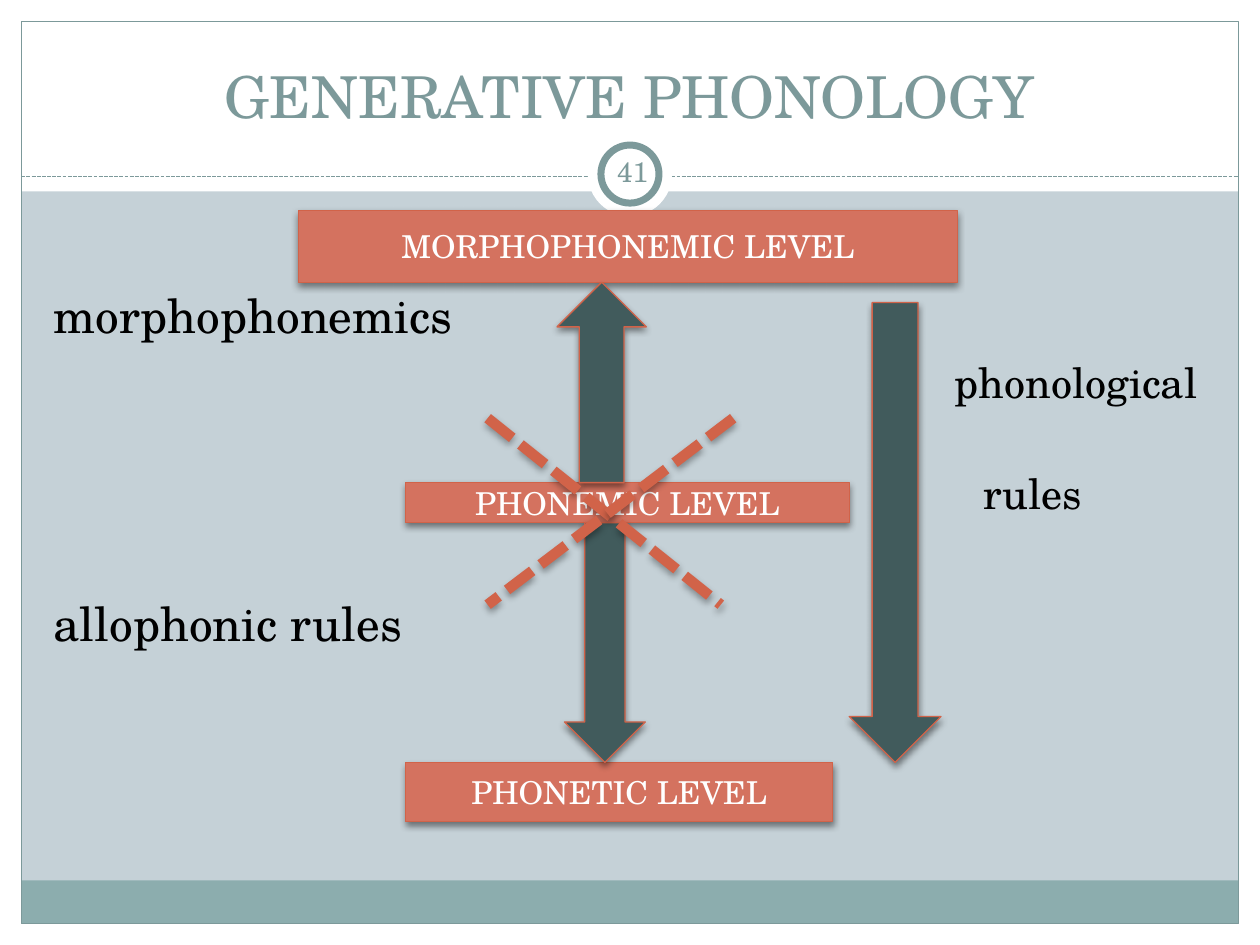
from dataclasses import dataclass

from lxml.etree import SubElement
from pptx import Presentation
from pptx.dml.color import RGBColor
from pptx.enum.dml import MSO_LINE_DASH_STYLE as Dash
from pptx.enum.shapes import MSO_CONNECTOR as Connector, MSO_SHAPE as Shape
from pptx.enum.text import MSO_ANCHOR as Anchor, PP_ALIGN as Align
from pptx.oxml.ns import qn
from pptx.util import Cm, Pt


@dataclass(frozen=True)
class Theme:
    font: str = "TeX Gyre Schola"
    background: str = "C5D1D7"
    white: str = "FFFFFF"
    black: str = "000000"
    teal: str = "7C999A"
    band: str = "8CADAE"
    arrow: str = "415B5C"
    box: str = "D4725F"
    edge: str = "D16349"
    title: int = 33
    process: int = 27
    rule: int = 24
    level: int = 18
    number: int = 16
    thin: float = 0.75
    ring: float = 4
    strike: float = 6


class SlideBuilder:
    def __init__(self, slide, theme):
        self.slide = slide
        self.theme = theme
        fill = slide.background.fill
        fill.solid()
        fill.fore_color.rgb = RGBColor.from_string(theme.background)

    def effects(self, element, opacity=None):
        effects = SubElement(element._element.spPr, qn("a:effectLst"))
        if opacity:
            shadow = SubElement(effects, qn("a:outerShdw"), blurRad=str(Pt(4)),
                                dist=str(Pt(2)), dir="5400000", rotWithShape="0")
            color = SubElement(shadow, qn("a:srgbClr"), val=self.theme.black)
            SubElement(color, qn("a:alpha"), val=str(opacity * 1000))

    def stroke(self, line, color, width):
        line.color.rgb = RGBColor.from_string(color)
        line.width = Pt(width)

    def shape(self, kind, place, fill=None, edge=None, width=None, opacity=None):
        shape = self.slide.shapes.add_shape(kind, *map(Cm, place))
        if fill:
            shape.fill.solid()
            shape.fill.fore_color.rgb = RGBColor.from_string(fill)
        else:
            shape.fill.background()
        if edge:
            self.stroke(shape.line, edge, width or self.theme.thin)
        else:
            shape.line.fill.background()
        self.effects(shape, opacity)
        return shape

    def set_text(self, frame, words, size, color, align=Align.CENTER, anchor=Anchor.MIDDLE):
        frame.word_wrap = True
        frame.vertical_anchor = anchor
        paragraph = frame.paragraphs[0]
        paragraph.text = words
        paragraph.alignment = align
        paragraph.font.name = self.theme.font
        paragraph.font.size = Pt(size)
        paragraph.font.color.rgb = RGBColor.from_string(color)

    def text(self, place, words, size, color, inset=0, **layout):
        frame = self.slide.shapes.add_textbox(*map(Cm, place)).text_frame
        frame.margin_left = frame.margin_right = Cm(inset)
        frame.margin_top = frame.margin_bottom = Cm(inset)
        self.set_text(frame, words, size, color, **layout)

    def level(self, place, words):
        theme = self.theme
        box = self.shape(Shape.RECTANGLE, place, theme.box, theme.edge, opacity=45)
        self.set_text(box.text_frame, words, theme.level, theme.white)

    def arrow(self, kind, place):
        self.shape(kind, place, self.theme.arrow, self.theme.edge, opacity=45)

    def dashes(self, start, end, color, width, opacity=None):
        line = self.slide.shapes.add_connector(
            Connector.STRAIGHT, *map(Cm, (*start, *end)))
        self.stroke(line.line, color, width)
        line.line.dash_style = Dash.SQUARE_DOT
        line._element.spPr.find(qn("a:ln")).find(qn("a:prstDash")).set("val", "sysDash")
        self.effects(line, opacity)


def main():
    theme = Theme()
    deck = Presentation()
    width, height, margin, header = 25.4, 19.05, 0.43, 3.86
    deck.slide_width, deck.slide_height = Cm(width), Cm(height)
    page = SlideBuilder(deck.slides.add_slide(deck.slide_layouts[6]), theme)

    right, bottom = width - margin, height - margin
    inner = width - 2 * margin
    for border in [(0, bottom, width, margin), (0, 0, width, header),
                   (0, 0, margin, height), (right, 0, margin, height)]:
        page.shape(Shape.RECTANGLE, border, theme.white)
    page.shape(Shape.RECTANGLE, (margin, bottom - 0.87, inner, 0.87), theme.band)
    page.shape(Shape.RECTANGLE, (margin, margin, inner, height - 2 * margin),
               edge=theme.teal)
    page.dashes((margin, 3.56), (right, 3.56), theme.teal, theme.thin)
    for diameter, edge in [(1.7, None), (1.17, theme.teal)]:
        place = ((width - diameter) / 2, 3.51 - diameter / 2, diameter, diameter)
        page.shape(Shape.OVAL, place, theme.white, edge, theme.ring)

    for left, middle, words, size in [
        (1.08, 6.35, "morphophonemics", theme.process),
        (1.08, 12.55, "allophonic rules", theme.process),
        (19.25, 7.7, "phonological", theme.rule),
        (19.82, 9.93, "rules", theme.rule),
    ]:
        page.text((left, middle - 0.6, right - left if left > 10 else 8.9, 1.2),
                  words, size, theme.black, align=Align.LEFT)

    page.level((8.18, 15.37, 8.61, 1.19), "PHONETIC LEVEL")
    page.level((8.18, 9.73, 8.94, 0.81), "PHONEMIC LEVEL")
    page.level((6.02, 4.24, 13.28, 1.45), "MORPHOPHONEMIC LEVEL")

    page.text((0.84, 0.64, 23.7, 2.11), "GENERATIVE PHONOLOGY", theme.title,
              theme.teal, inset=0.13, anchor=Anchor.BOTTOM)
    page.text((12.12, 2.84, 1.27, 1.22), "41", theme.number, theme.teal, inset=0.13)

    page.arrow(Shape.UP_ARROW, (11.23, 5.69, 1.8, 4.04))
    page.arrow(Shape.DOWN_ARROW, (11.38, 10.54, 1.63, 4.83))
    for start, end in [((9.83, 8.43), (14.53, 12.19)), ((14.78, 8.43), (9.83, 12.19))]:
        page.dashes(start, end, theme.edge, theme.strike, opacity=35)
    page.arrow(Shape.DOWN_ARROW, (17.12, 6.1, 1.85, 9.27))

    deck.save("out.pptx")


if __name__ == "__main__":
    main()
